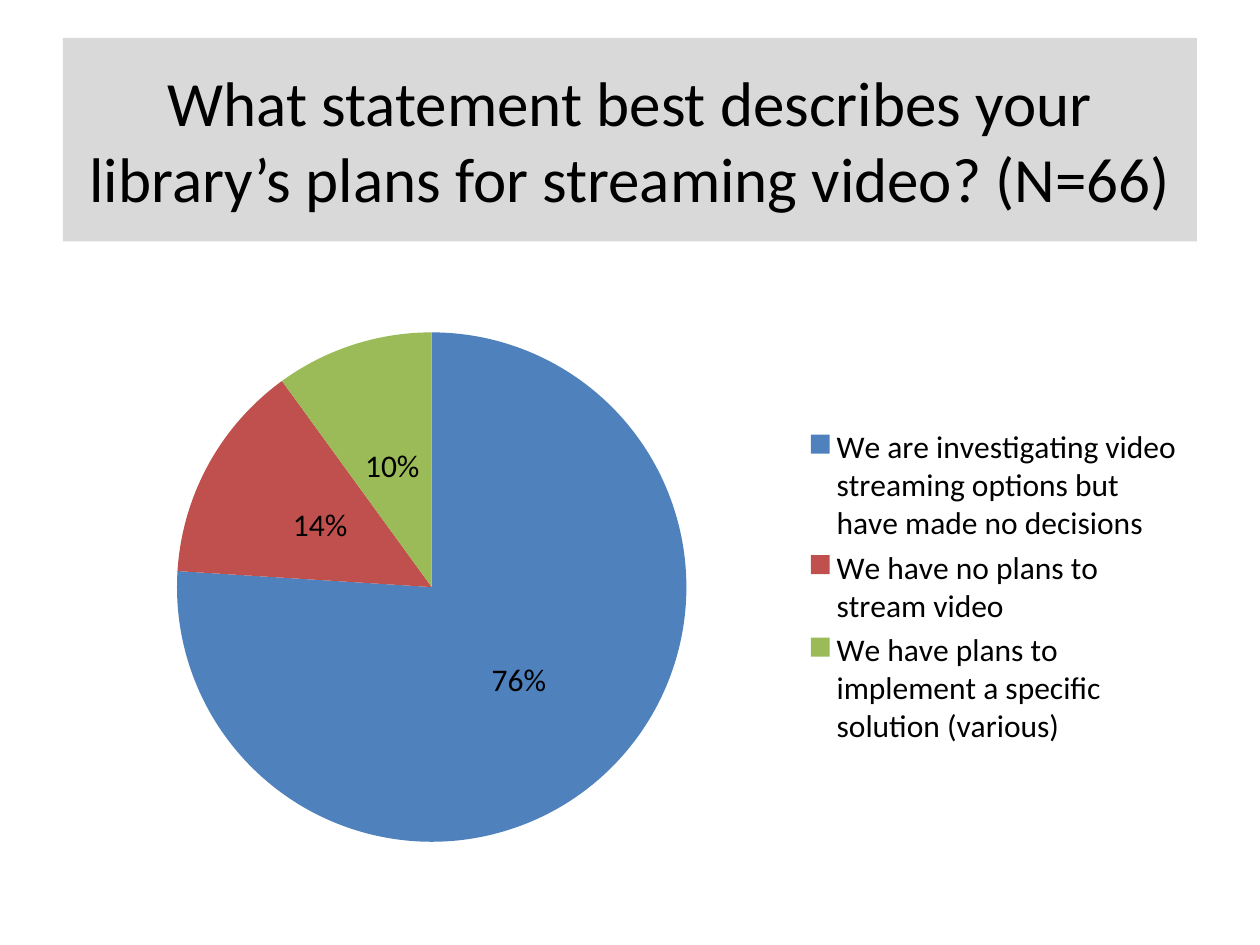
"""Build a survey slide with a title band and a pie chart."""
from dataclasses import dataclass

from pptx import Presentation
from pptx.chart.data import CategoryChartData
from pptx.dml.color import RGBColor
from pptx.enum import chart as charts, shapes, text
from pptx.util import Pt


@dataclass(frozen=True)
class Theme:
    """Hold the colours, font and type sizes."""
    font: str = "Calibri"
    ink: str = "000000"
    band: str = "D9D9D9"
    slices: tuple = ("4F81BD", "C0504D", "9BBB59")
    head: int = 36
    body: int = 18


THEME = Theme()
TITLE = "What statement best describes your library’s plans for streaming video? (N=66)"
PLANS = {
    "We are investigating video streaming options but have made no decisions": 76,
    "We have no plans to stream video": 14,
    "We have plans to implement a specific solution (various)": 10,
}


def style(font, size):
    """Set the theme font and ink at a given size."""
    font.name = THEME.font
    font.size = Pt(size)
    font.color.rgb = RGBColor.from_string(THEME.ink)


def paint(fill, color):
    """Fill with one solid colour."""
    fill.solid()
    fill.fore_color.rgb = RGBColor.from_string(color)


def add_title(slide, words, *box):
    """Add the title band."""
    band = slide.shapes.add_shape(shapes.MSO_SHAPE.RECTANGLE, *map(Pt, box))
    band.shadow.inherit = False
    paint(band.fill, THEME.band)
    band.line.fill.background()
    frame = band.text_frame
    frame.word_wrap = True
    frame.vertical_anchor = text.MSO_ANCHOR.MIDDLE
    frame.text = words
    para = frame.paragraphs[0]
    para.alignment = text.PP_ALIGN.CENTER
    style(para.font, THEME.head)


def add_pie(slide, plans, *box):
    """Add the pie with percent labels and a legend on the right."""
    data = CategoryChartData()
    data.categories = list(plans)
    data.add_series("Series 1", plans.values())
    pie = slide.shapes.add_chart(
        charts.XL_CHART_TYPE.PIE, *map(Pt, box), data).chart
    style(pie.font, THEME.body)
    pie.has_title = False
    pie.has_legend = True
    pie.legend.position = charts.XL_LEGEND_POSITION.RIGHT
    pie.legend.include_in_layout = False
    plot = pie.plots[0]
    plot.vary_by_categories = True
    for spot, color in enumerate(THEME.slices):
        paint(plot.series[0].points[spot].format.fill, color)
    plot.has_data_labels = True
    labels = plot.data_labels
    labels.show_value = False
    labels.show_percentage = True
    labels.number_format = "0%"
    labels.number_format_is_linked = False
    labels.position = charts.XL_LABEL_POSITION.CENTER
    style(labels.font, THEME.body)


def main():
    """Build and save the slide."""
    deck = Presentation()
    deck.slide_width, deck.slide_height = Pt(720), Pt(540)
    slide = deck.slides.add_slide(deck.slide_layouts[6])
    add_title(slide, TITLE, 36, 21.6, 648, 116.4)
    add_pie(slide, PLANS, 36, 180, 648, 311)
    deck.save("out.pptx")


if __name__ == "__main__":
    main()
